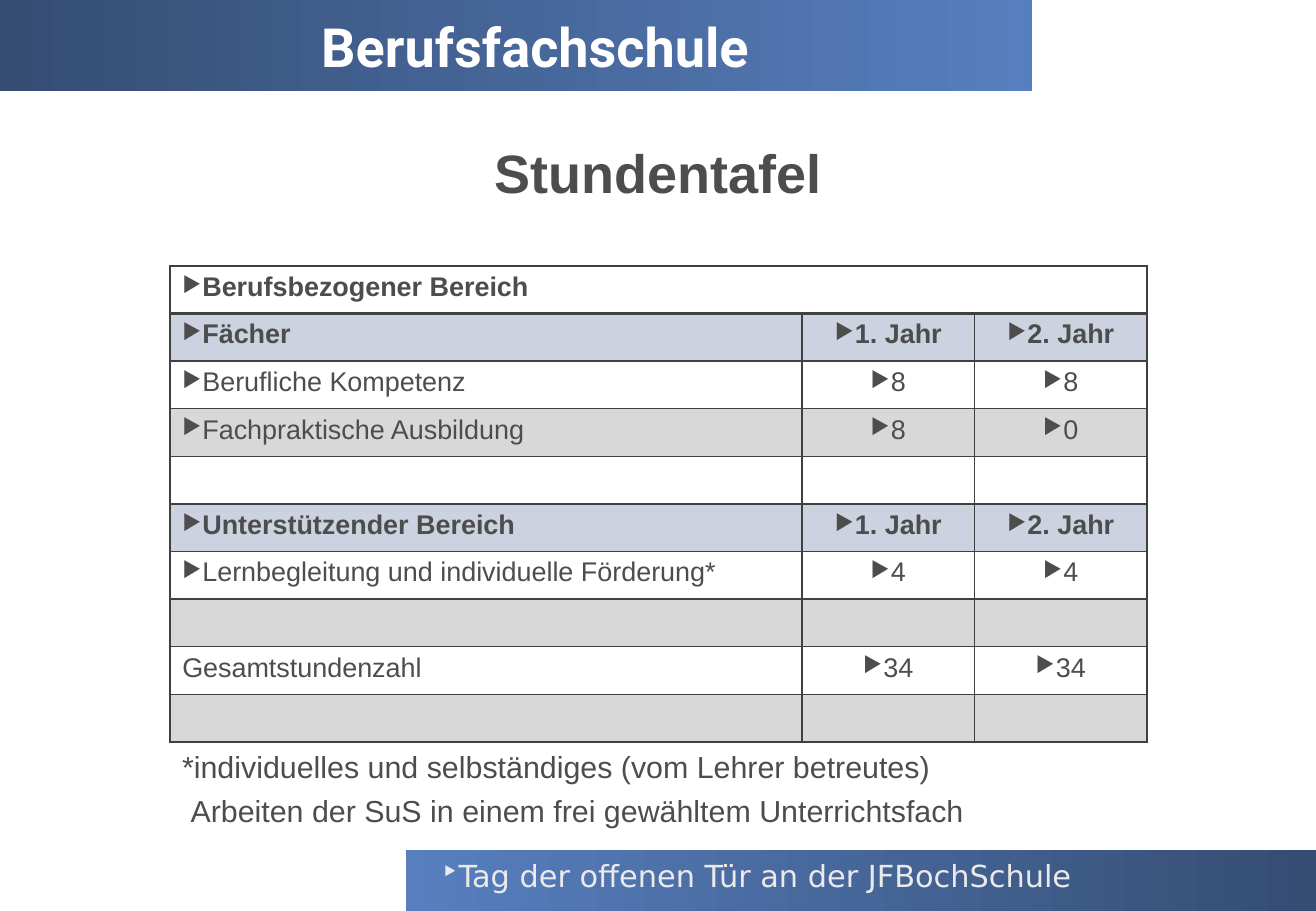
import pptx
import pptx.util
import pptx.dml.color
import pptx.enum.shapes
import pptx.enum.text
import pptx.oxml.ns
from lxml import etree

Inches, Pt = pptx.util.Inches, pptx.util.Pt
RGBColor = pptx.dml.color.RGBColor
ALIGN = pptx.enum.text.PP_ALIGN
qn = pptx.oxml.ns.qn

BLUE = RGBColor(0x57, 0x7F, 0xBF)
NAVY = RGBColor(0x35, 0x4D, 0x73)
WHITE = RGBColor(0xFF, 0xFF, 0xFF)
PALE = RGBColor(0xEA, 0xEA, 0xEA)
INK = RGBColor(0x4D, 0x4D, 0x4D)
GRID = RGBColor(0x40, 0x40, 0x40)
HEAD_TINT = RGBColor(0x00, 0x20, 0x60)

TITLE = "Berufsfachschule"
HEADING = "Stundentafel"
FOOTER = "Tag der offenen Tür an der JFBochSchule"
FOOTNOTE = [
    "*individuelles und selbständiges (vom Lehrer betreutes)",
    "Arbeiten der SuS in einem frei gewähltem Unterrichtsfach",
]
# Row kind, then the three cells
TIMETABLE = [
    ("section", "Berufsbezogener Bereich", "", ""),
    ("head", "Fächer", "1. Jahr", "2. Jahr"),
    ("plain", "Berufliche Kompetenz", "8", "8"),
    ("grey", "Fachpraktische Ausbildung", "8", "0"),
    ("plain", "", "", ""),
    ("head", "Unterstützender Bereich", "1. Jahr", "2. Jahr"),
    ("plain", "Lernbegleitung und individuelle Förderung*", "4", "4"),
    ("grey", "", "", ""),
    ("total", "Gesamtstundenzahl", "34", "34"),
    ("grey", "", "", ""),
]
TINTS = {"head": HEAD_TINT, "grey": GRID}
COLUMN_WIDTHS = [5.2, 1.42, 1.42]
ROW_HEIGHT = 0.392
TABLE_LEFT, TABLE_TOP = 1.4, 2.19


def write(paragraph, text, size, color, font="Arial", bold=False, align=ALIGN.LEFT):
    paragraph.alignment = align
    run = paragraph.add_run()
    run.text = text
    for name, value in {"size": Pt(size), "name": font, "bold": bold}.items():
        setattr(run.font, name, value)
    run.font.color.rgb = color


def add_bullet(paragraph, char, percent=100):
    properties = paragraph._p.get_or_add_pPr()
    properties.set("marL", "0")
    properties.set("indent", "0")
    etree.SubElement(properties, qn("a:buSzPct"), val=str(percent * 1000))
    etree.SubElement(properties, qn("a:buChar"), char=char)


def fill_gradient(shape, start, end):
    shape.fill.gradient()
    shape.fill.gradient_angle = 0
    for stop, color, position in zip(shape.fill.gradient_stops, (start, end), (0, 1)):
        stop.color.rgb = color
        stop.position = position


def fill_cell(cell, tint):
    """Fill white, or with the tint at 20 % opacity."""
    cell.fill.solid()
    cell.fill.fore_color.rgb = tint or WHITE
    if tint:
        color = cell._tc.tcPr.find(".//" + qn("a:srgbClr"))
        etree.SubElement(color, qn("a:alpha"), val="20000")


def draw_borders(cell, widths):
    """Draw the left, right, top and bottom borders, widths in points."""
    for index, (side, width) in enumerate(zip("LRTB", widths)):
        line = etree.Element(qn("a:ln" + side), w=str(Pt(width)))
        solid = etree.SubElement(line, qn("a:solidFill"))
        etree.SubElement(solid, qn("a:srgbClr"), val=str(GRID))
        cell._tc.get_or_add_tcPr().insert(index, line)


def add_text_box(slide, left, top, width, height):
    box = slide.shapes.add_textbox(*map(Inches, (left, top, width, height)))
    box.text_frame.word_wrap = True
    return box.text_frame


def add_timetable(slide):
    table = slide.shapes.add_table(
        len(TIMETABLE), len(COLUMN_WIDTHS), Inches(TABLE_LEFT), Inches(TABLE_TOP),
        Inches(sum(COLUMN_WIDTHS)), Inches(ROW_HEIGHT * len(TIMETABLE))).table
    table.first_row = table.horz_banding = False
    for column, width in zip(table.columns, COLUMN_WIDTHS):
        column.width = Inches(width)
    for r, (kind, *texts) in enumerate(TIMETABLE):
        table.rows[r].height = Inches(ROW_HEIGHT)
        for c, text in enumerate(texts):
            cell = table.cell(r, c)
            fill_cell(cell, TINTS.get(kind))
            draw_borders(cell, (1, 1, 2 if r == 1 else 1, 2 if r == 0 else 1))
            paragraph = cell.text_frame.paragraphs[0]
            if not text:
                etree.SubElement(paragraph._p, qn("a:endParaRPr"), sz="1600")
                continue
            if kind != "total" or c > 0:
                add_bullet(paragraph, "▶", 80)
            write(paragraph, text, 16, INK, bold=kind in ("section", "head"),
                  align=ALIGN.CENTER if c else ALIGN.LEFT)
    table.cell(0, 0).merge(table.cell(0, len(COLUMN_WIDTHS) - 1))


def main():
    deck = pptx.Presentation()
    deck.slide_width, deck.slide_height = Inches(10.83), Inches(7.5)
    slide = deck.slides.add_slide(deck.slide_layouts[5])

    footer_band = slide.shapes.add_shape(
        pptx.enum.shapes.MSO_SHAPE.RECTANGLE,
        Inches(3.34), Inches(7), Inches(7.49), Inches(0.5))
    footer_band.shadow.inherit = False
    footer_band.line.fill.background()
    fill_gradient(footer_band, BLUE, NAVY)

    footer = add_text_box(slide, 3.53, 7.01, 6.14, 0.49).paragraphs[0]
    add_bullet(footer, "‣")
    write(footer, FOOTER, 18, PALE, font="DejaVu Sans")

    title = slide.shapes.title
    title.left, title.top, title.width, title.height = map(Inches, (0, 0, 8.49, 0.75))
    fill_gradient(title, NAVY, BLUE)
    title.text_frame.margin_left = 0
    title.text_frame.vertical_anchor = pptx.enum.text.MSO_ANCHOR.MIDDLE
    title_line = title.text_frame.paragraphs[0]
    title_line._p.get_or_add_pPr().set("marL", str(Inches(0.42)))
    write(title_line, TITLE, 32, WHITE, font="Roboto", bold=True, align=ALIGN.CENTER)

    heading = add_text_box(slide, 0, 1.1, 10.83, 0.64).paragraphs[0]
    write(heading, HEADING, 32, INK, bold=True, align=ALIGN.CENTER)

    add_timetable(slide)

    footnote = add_text_box(slide, TABLE_LEFT, 6.11, 8.03, 0.77)
    write(footnote.paragraphs[0], FOOTNOTE[0], 18, INK)
    second_line = footnote.add_paragraph()
    second_line.space_before = Pt(4.5)
    second_line._p.get_or_add_pPr().set("marL", str(Inches(0.07)))
    write(second_line, FOOTNOTE[1], 18, INK)

    deck.save("out.pptx")


if __name__ == "__main__":
    main()
